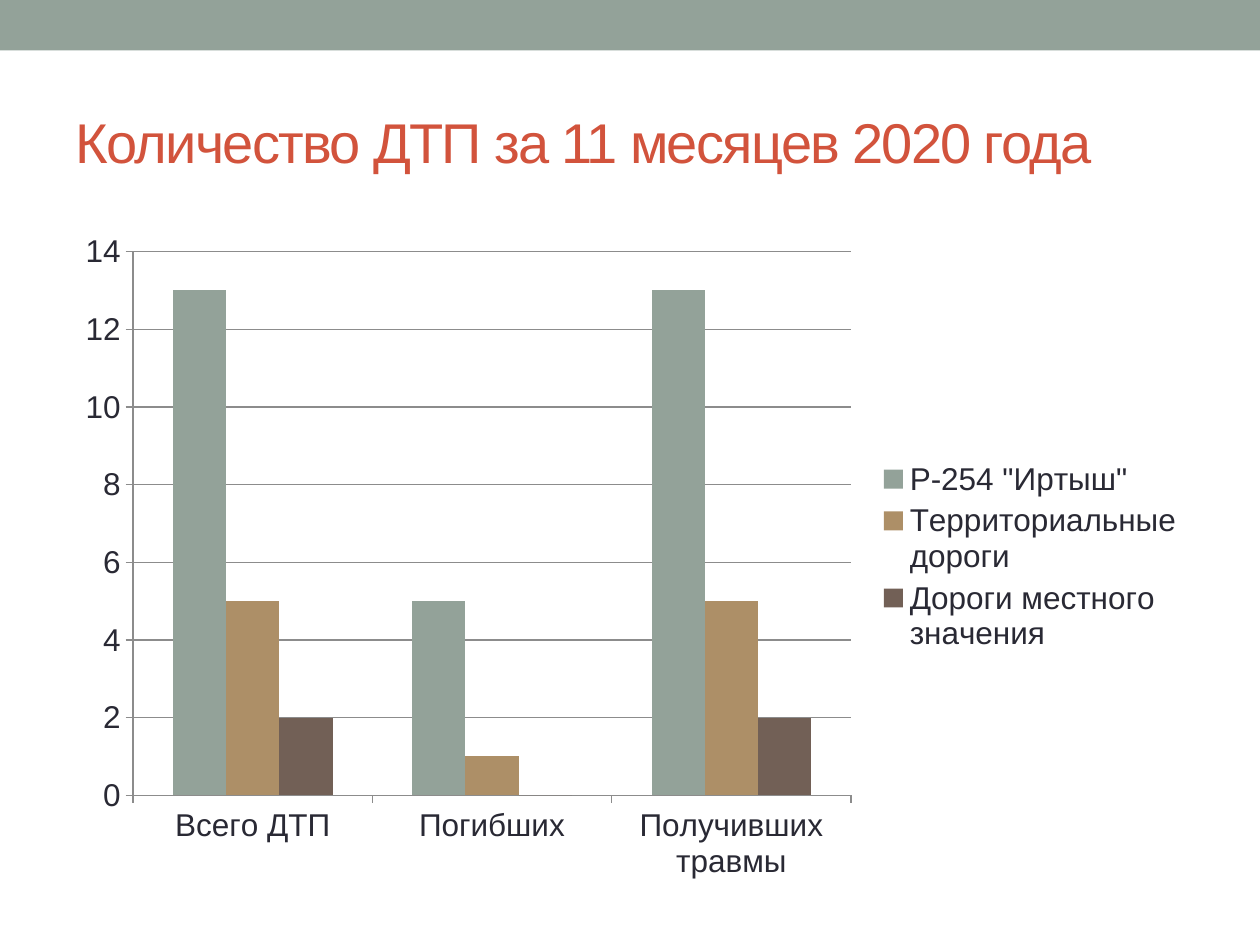
from dataclasses import dataclass

from pptx import Presentation
from pptx.chart.data import CategoryChartData
from pptx.dml.color import RGBColor
from pptx.enum.chart import XL_CHART_TYPE, XL_LEGEND_POSITION, XL_TICK_MARK
from pptx.enum.shapes import MSO_SHAPE
from pptx.enum.text import MSO_ANCHOR, PP_ALIGN
from pptx.util import Inches, Pt

# Content
TITLE = "Количество ДТП за 11 месяцев 2020 года"
CATEGORIES = ["Всего ДТП", "Погибших", "Получивших травмы"]
ROADS = [
    ('Р-254 "Иртыш"', (13, 5, 13), "93A299"),
    ("Территориальные дороги", (5, 1, 5), "AD8F67"),
    ("Дороги местного значения", (2, 0, 2), "726056"),
]


@dataclass(frozen=True)
class Theme:
    font: str = "Arial"
    band: str = "93A299"
    title: str = "D2533C"
    text: str = "292934"
    line: str = "8C8C8C"
    title_size: int = 32
    chart_size: int = 18
    title_spacing: int = -100  # hundredths of a point


THEME = Theme()
MARGIN = 0.5
SLIDE_WIDTH, SLIDE_HEIGHT = 10, 7.5
CONTENT_WIDTH = SLIDE_WIDTH - 2 * MARGIN


def color(value):
    return RGBColor.from_string(value)


def add_band(slide):
    band = slide.shapes.add_shape(
        MSO_SHAPE.RECTANGLE, 0, 0, Inches(SLIDE_WIDTH), Inches(0.4))
    band.shadow.inherit = False
    band.fill.solid()
    band.fill.fore_color.rgb = color(THEME.band)
    band.line.fill.background()


def format_title(title):
    title.left, title.top = Inches(MARGIN), Inches(0.58)
    title.width, title.height = Inches(CONTENT_WIDTH), Inches(1.08)
    title.text_frame.text = TITLE
    title.text_frame.word_wrap = True
    title.text_frame.vertical_anchor = MSO_ANCHOR.MIDDLE
    paragraph = title.text_frame.paragraphs[0]
    paragraph.alignment = PP_ALIGN.LEFT
    paragraph.font.name = THEME.font
    paragraph.font.size = Pt(THEME.title_size)
    paragraph.font.color.rgb = color(THEME.title)
    # Letter spacing
    properties = paragraph.runs[0]._r.get_or_add_rPr()
    properties.set("spc", str(THEME.title_spacing))


def add_accident_chart(slide):
    data = CategoryChartData()
    data.categories = CATEGORIES
    for name, values, _ in ROADS:
        data.add_series(name, values)
    chart = slide.shapes.add_chart(
        XL_CHART_TYPE.COLUMN_CLUSTERED, Inches(MARGIN), Inches(1.75),
        Inches(CONTENT_WIDTH), Inches(5.33), data).chart
    chart.has_title = False
    chart.font.name = THEME.font
    chart.font.size = Pt(THEME.chart_size)
    chart.font.color.rgb = color(THEME.text)

    # Columns
    plot = chart.plots[0]
    plot.gap_width = 150
    plot.overlap = 0
    plot.vary_by_categories = False
    for series, (_, _, fill) in zip(plot.series, ROADS):
        series.format.fill.solid()
        series.format.fill.fore_color.rgb = color(fill)

    # Axes and gridlines
    value_axis = chart.value_axis
    value_axis.minimum_scale, value_axis.maximum_scale = 0, 14
    value_axis.major_unit = 2
    value_axis.has_major_gridlines = True
    for axis in (chart.category_axis, value_axis):
        axis.major_tick_mark = XL_TICK_MARK.OUTSIDE
        axis.minor_tick_mark = XL_TICK_MARK.NONE
    for part in (chart.category_axis, value_axis, value_axis.major_gridlines):
        part.format.line.color.rgb = color(THEME.line)
        part.format.line.width = Pt(0.75)

    # Legend
    chart.has_legend = True
    chart.legend.position = XL_LEGEND_POSITION.RIGHT
    chart.legend.include_in_layout = False


def main():
    presentation = Presentation()
    presentation.slide_width = Inches(SLIDE_WIDTH)
    presentation.slide_height = Inches(SLIDE_HEIGHT)
    slide = presentation.slides.add_slide(presentation.slide_layouts[5])
    add_band(slide)
    format_title(slide.shapes.title)
    add_accident_chart(slide)
    presentation.save("out.pptx")


if __name__ == "__main__":
    main()
